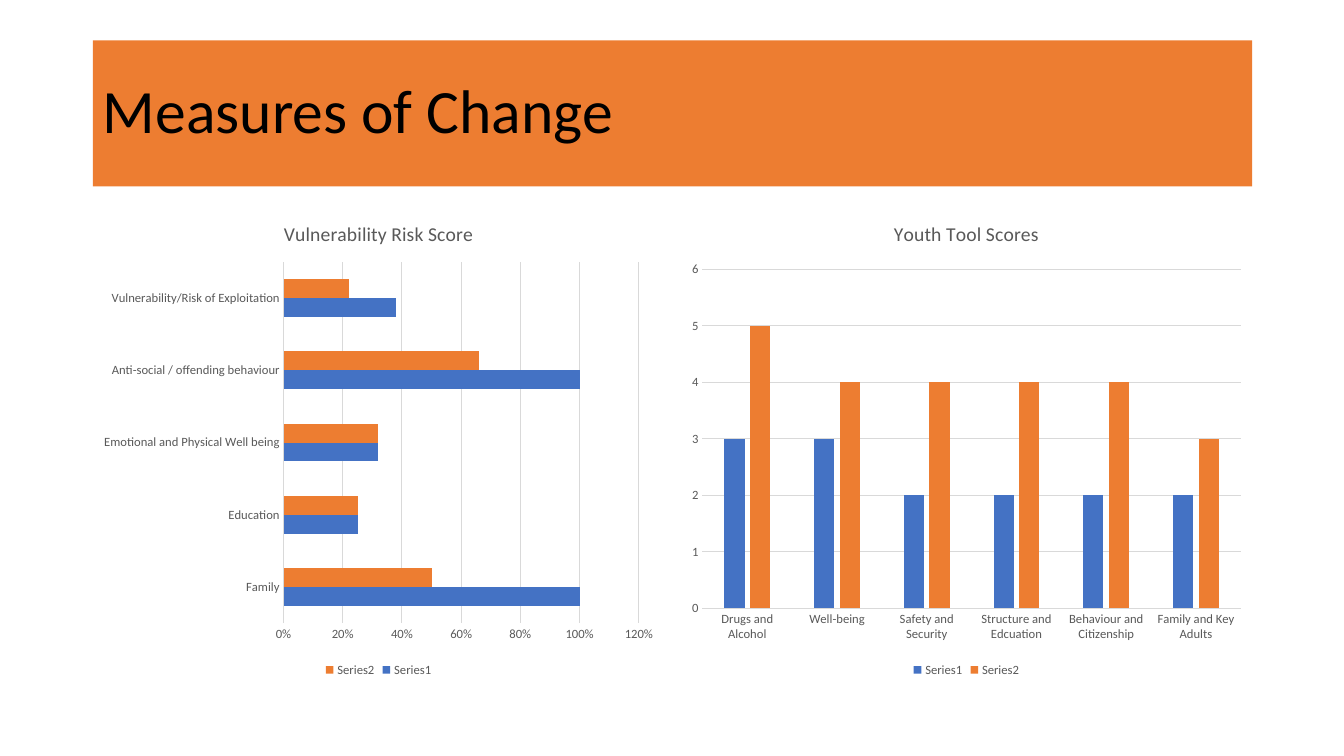
from dataclasses import dataclass

from pptx import Presentation
from pptx.chart.data import CategoryChartData
from pptx.dml.color import RGBColor
from pptx.enum.chart import XL_CHART_TYPE, XL_LEGEND_POSITION, XL_TICK_MARK
from pptx.enum.text import MSO_ANCHOR, MSO_AUTO_SIZE, PP_ALIGN
from pptx.util import Inches, Pt

BARS = XL_CHART_TYPE.BAR_CLUSTERED
COLUMNS = XL_CHART_TYPE.COLUMN_CLUSTERED
BOTTOM = XL_LEGEND_POSITION.BOTTOM
NO_TICK = XL_TICK_MARK.NONE
MIDDLE = MSO_ANCHOR.MIDDLE
LEFT = PP_ALIGN.LEFT
NO_AUTOFIT = MSO_AUTO_SIZE.NONE

FONT = "Calibri"
BLUE, ORANGE, BLACK = "4472C4", "ED7D31", "000000"
GREY_TEXT, GREY_LINE = "595959", "D9D9D9"

# Grid: two equal columns between the side margins
SLIDE_W, SLIDE_H = 13.33, 7.5
MARGIN, GUTTER = 0.92, 0.16
CONTENT_W = 11.5
COLUMN_W = (CONTENT_W - GUTTER) / 2
BANNER_TOP, BANNER_H = 0.4, 1.45
CHART_TOP, CHART_H = 2, 4.76


@dataclass(frozen=True)
class ScoreChart:
    title: str
    kind: int
    categories: tuple[str, ...]
    before: tuple[float, ...]
    after: tuple[float, ...]
    axis_max: float
    axis_step: float
    number_format: str
    gap: int
    overlap: int


SCORE_CHARTS = (
    ScoreChart(
        "Vulnerability Risk Score", BARS,
        ("Family", "Education", "Emotional and Physical Well being",
         "Anti-social / offending behaviour", "Vulnerability/Risk of Exploitation"),
        (1, 0.25, 0.32, 1, 0.38), (0.5, 0.25, 0.32, 0.66, 0.22),
        1.2, 0.2, "0%", 182, 0),
    ScoreChart(
        "Youth Tool Scores", COLUMNS,
        ("Drugs and Alcohol", "Well-being", "Safety and Security",
         "Structure and Edcuation", "Behaviour and Citizenship",
         "Family and Key Adults"),
        (3, 3, 2, 2, 2, 2), (5, 4, 4, 4, 4, 3),
        6, 1, "General", 219, -27),
)


def rgb(value: str) -> RGBColor:
    return RGBColor.from_string(value)


def style_font(font, size: float, color: str) -> None:
    font.name, font.size, font.bold = FONT, Pt(size), False
    font.color.rgb = rgb(color)


def style_line(line) -> None:
    line.color.rgb = rgb(GREY_LINE)
    line.width = Pt(0.75)


def add_banner(slide, text: str) -> None:
    banner = slide.shapes.title
    banner.left, banner.top = Inches(MARGIN), Inches(BANNER_TOP)
    banner.width, banner.height = Inches(CONTENT_W), Inches(BANNER_H)
    banner.fill.solid()
    banner.fill.fore_color.rgb = rgb(ORANGE)
    frame = banner.text_frame
    frame.text = text
    frame.auto_size = NO_AUTOFIT
    frame.vertical_anchor = MIDDLE
    heading = frame.paragraphs[0]
    heading.alignment = LEFT
    heading.line_spacing = 0.9
    style_font(heading.font, 44, BLACK)


def add_score_chart(slide, score: ScoreChart, column: int) -> None:
    data = CategoryChartData(number_format=score.number_format)
    data.categories = score.categories
    data.add_series("Series1", score.before)
    data.add_series("Series2", score.after)
    left = MARGIN + column * (COLUMN_W + GUTTER)
    chart = slide.shapes.add_chart(
        score.kind, Inches(left), Inches(CHART_TOP),
        Inches(COLUMN_W), Inches(CHART_H), data).chart
    style_font(chart.font, 10, BLACK)

    # Title and legend
    chart.has_title = True
    chart.chart_title.include_in_layout = False
    heading = chart.chart_title.text_frame
    heading.text = score.title
    style_font(heading.paragraphs[0].font, 14, GREY_TEXT)
    chart.has_legend = True
    chart.legend.position = BOTTOM
    chart.legend.include_in_layout = False
    style_font(chart.legend.font, 9, GREY_TEXT)

    # Axes
    categories, values = chart.category_axis, chart.value_axis
    for axis in (categories, values):
        axis.major_tick_mark = axis.minor_tick_mark = NO_TICK
        style_font(axis.tick_labels.font, 9, GREY_TEXT)
    categories.has_major_gridlines = False
    style_line(categories.format.line)
    values.has_major_gridlines = True
    style_line(values.major_gridlines.format.line)
    values.format.line.fill.background()
    values.minimum_scale, values.maximum_scale = 0, score.axis_max
    values.major_unit = score.axis_step
    values.tick_labels.number_format = score.number_format
    values.tick_labels.number_format_is_linked = False

    # Bars
    plot = chart.plots[0]
    plot.vary_by_categories = False
    plot.gap_width, plot.overlap = score.gap, score.overlap
    for series, color in zip(plot.series, (BLUE, ORANGE)):
        series.invert_if_negative = False
        series.format.fill.solid()
        series.format.fill.fore_color.rgb = rgb(color)


def main() -> None:
    deck = Presentation()
    deck.slide_width, deck.slide_height = Inches(SLIDE_W), Inches(SLIDE_H)
    title_only = deck.slide_layouts[5]
    slide = deck.slides.add_slide(title_only)
    add_banner(slide, "Measures of Change")
    for column, score in enumerate(SCORE_CHARTS):
        add_score_chart(slide, score, column)
    deck.save("out.pptx")


if __name__ == "__main__":
    main()
